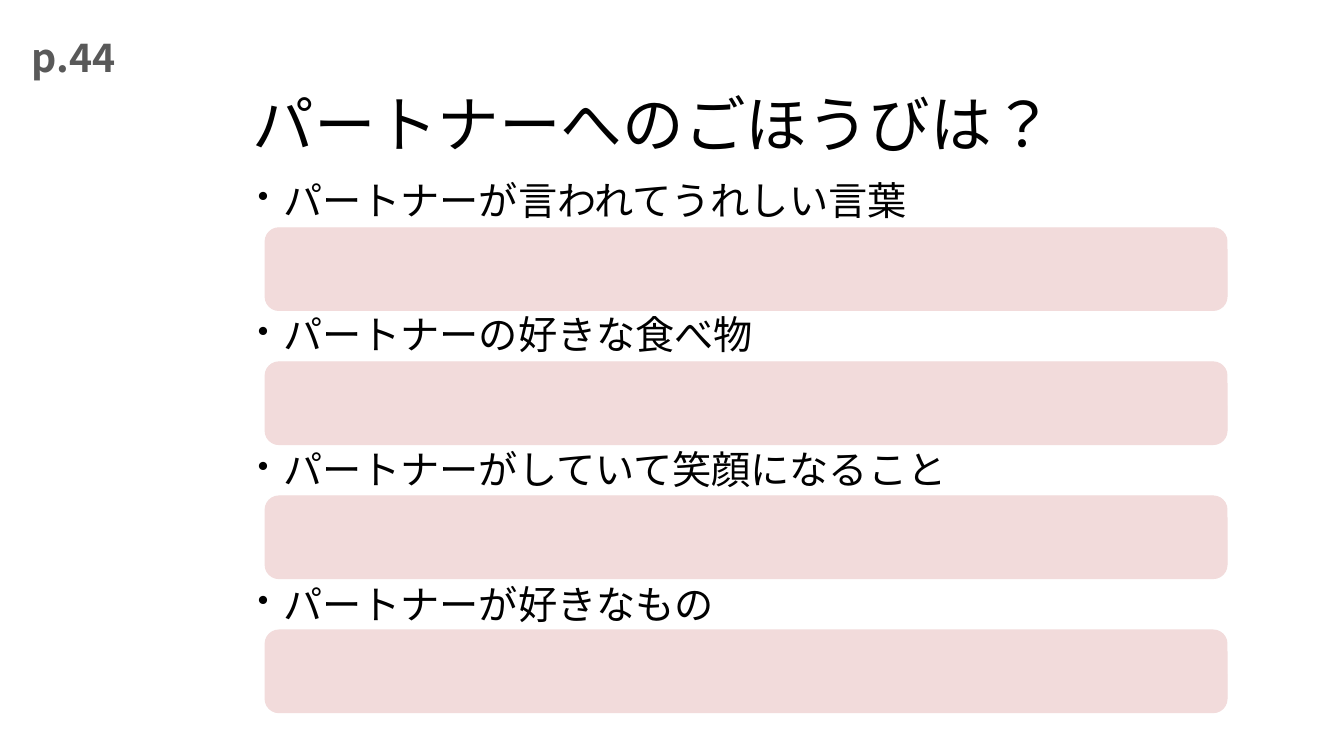
from lxml.etree import SubElement
from pptx import Presentation
from pptx.dml.color import RGBColor
from pptx.enum.lang import MSO_LANGUAGE_ID
from pptx.enum.shapes import MSO_SHAPE
from pptx.enum.text import MSO_ANCHOR, PP_ALIGN
from pptx.oxml.ns import qn
from pptx.util import Inches, Pt

FONT = "Noto Sans CJK JP"
BLACK = RGBColor(0x00, 0x00, 0x00)
GRAY = RGBColor(0x59, 0x59, 0x59)
PINK = RGBColor(0xF2, 0xDB, 0xDB)

LEFT, WIDTH = 2.41, 10.25
BAR_TOP, BAR_PITCH = 2.26, 1.33
PROMPTS = [
    "パートナーが言われてうれしい言葉",
    "パートナーの好きな食べ物",
    "パートナーがしていて笑顔になること",
    "パートナーが好きなもの",
]


def add_box(left, top, width, height, anchor):
    tf = slide.shapes.add_textbox(
        Inches(left), Inches(top), Inches(width), Inches(height)).text_frame
    tf.word_wrap = True
    tf.vertical_anchor = anchor
    return tf


def add_run(p, text, size, color, bold=False):
    r = p.add_run()
    r.text = text
    r.font.size = Pt(size)
    r.font.bold = bold
    r.font.color.rgb = color
    r.font.language_id = MSO_LANGUAGE_ID.JAPANESE
    r.font.name = FONT
    SubElement(r.font._element, qn("a:ea"), typeface=FONT)


prs = Presentation()
prs.slide_width, prs.slide_height = Inches(13.33), Inches(7.5)
slide = prs.slides.add_slide(prs.slide_layouts[6])

# Answer bars
for i in range(len(PROMPTS)):
    sp = slide.shapes.add_shape(
        MSO_SHAPE.ROUNDED_RECTANGLE, Inches(2.63),
        Inches(BAR_TOP + i * BAR_PITCH), Inches(9.54), Inches(0.82))
    sp.shadow.inherit = False
    sp.fill.solid()
    sp.fill.fore_color.rgb = PINK
    sp.line.color.rgb = PINK
    sp.line.width = Pt(0.75)

# Title
p = add_box(LEFT, 0.33, WIDTH, 1.31, MSO_ANCHOR.BOTTOM).paragraphs[0]
p.line_spacing = 0.9
add_run(p, "パートナーへのごほうびは？", 44, BLACK)

# Prompts, spaced to leave room for an answer bar under each
tf = add_box(LEFT, 1.75, WIDTH, 4.5, MSO_ANCHOR.TOP)
for i, prompt in enumerate(PROMPTS):
    p = tf.add_paragraph() if i else tf.paragraphs[0]
    pPr = p._p.get_or_add_pPr()
    pPr.set("marL", str(Inches(0.3)))
    pPr.set("indent", str(Inches(-0.25)))
    SubElement(pPr, qn("a:buSzPct"), val="80000")
    SubElement(pPr, qn("a:buChar"), char="•")
    p.line_spacing = 0.9
    p.space_before = Pt(66 if i else 0)
    add_run(p, prompt, 28, BLACK)

# Page reference
p = add_box(0, 0.14, 1.46, 0.85, MSO_ANCHOR.MIDDLE).paragraphs[0]
p.alignment = PP_ALIGN.CENTER
add_run(p, "p.44", 28, GRAY, bold=True)

prs.save("out.pptx")
